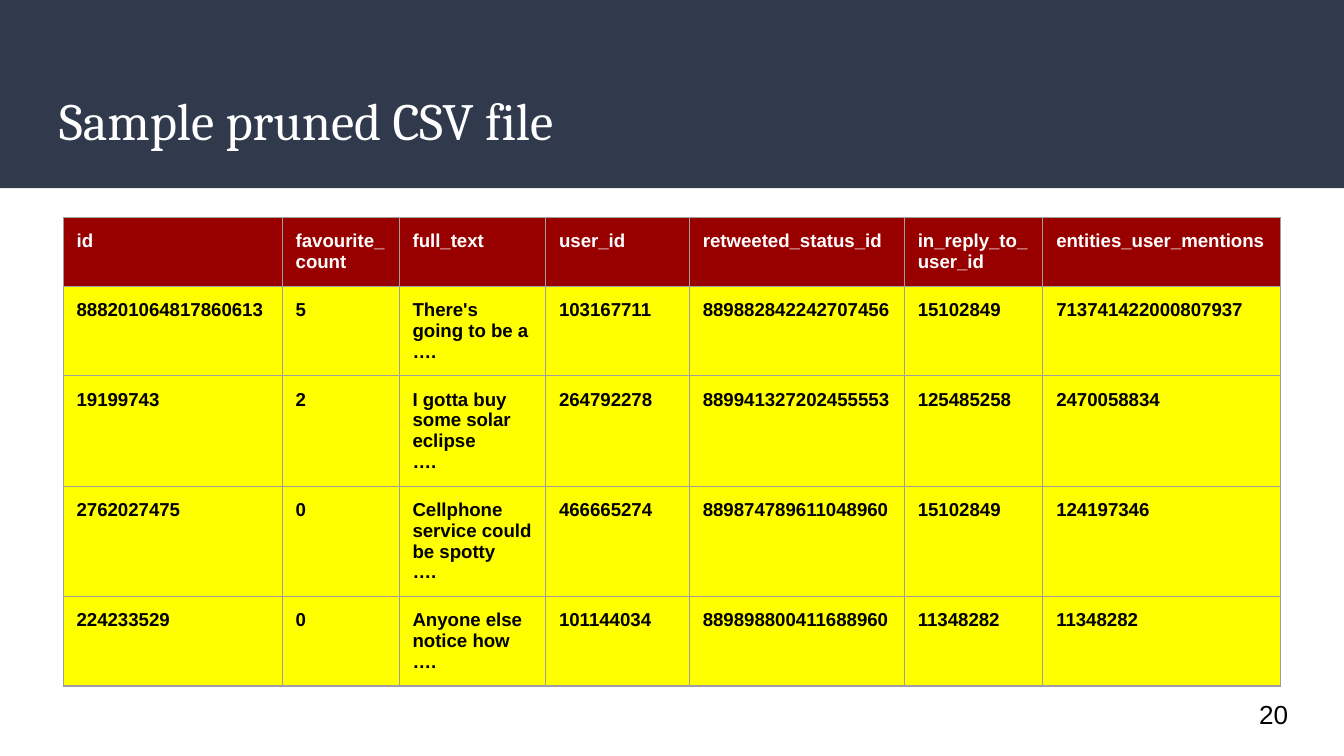
from lxml import etree
from pptx import Presentation
from pptx.dml.color import RGBColor
from pptx.enum.shapes import MSO_SHAPE
from pptx.enum.text import MSO_ANCHOR, PP_ALIGN
from pptx.oxml.ns import qn
from pptx.util import Inches, Pt

RECT = MSO_SHAPE.RECTANGLE
MID, TOP = MSO_ANCHOR.MIDDLE, MSO_ANCHOR.TOP
LEFT = PP_ALIGN.LEFT

NAVY = RGBColor(0x31, 0x39, 0x4D)
WHITE = RGBColor(0xFF, 0xFF, 0xFF)
BLACK = RGBColor(0, 0, 0)
RED = RGBColor(0x98, 0, 0)
YELLOW = RGBColor(0xFF, 0xFF, 0)
GREY = RGBColor(0x9E, 0x9E, 0x9E)

WIDE = Inches(10)
HIGH = WIDE * 9 // 16
PAD = Inches(0.1)
COLS = [1.63, 0.87, 1.09, 1.07, 1.6, 1.03, 1.77]
ROWS = [0.42, 0.42, 0.42, 0.43, 0.43]
SIDES = ("a:lnL", "a:lnR", "a:lnT", "a:lnB")
INSETS = dict.fromkeys(
    ("margin_left", "margin_right", "margin_top", "margin_bottom"), PAD)

HEAD = {"name": "Cambria", "size": Pt(28), "bold": False, "color": WHITE}
LABEL = {"name": "Arial", "size": Pt(10), "bold": True, "color": WHITE}
BODY = {**LABEL, "color": BLACK}
PAGE = {"name": "Arial", "size": Pt(14), "bold": False, "color": BLACK}

DATA = [
    ["id", "favourite_count", "full_text", "user_id", "retweeted_status_id",
     "in_reply_to_user_id", "entities_user_mentions"],
    ["888201064817860613", "5", "There's going to be a ….", "103167711",
     "889882842242707456", "15102849", "713741422000807937"],
    ["19199743", "2", "I gotta buy some solar eclipse\n….", "264792278",
     "889941327202455553", "125485258", "2470058834"],
    ["2762027475", "0", "Cellphone service could be spotty\n….", "466665274",
     "889874789611048960", "15102849", "124197346"],
    ["224233529", "0", "Anyone else notice how\n….", "101144034",
     "889898800411688960", "11348282", "11348282"],
]


def assign(item, values):
    """Set each attribute named in a dict."""
    for key, value in values.items():
        setattr(item, key, value)


def write(frame, text, style):
    """Fill a text frame with left-aligned, styled paragraphs."""
    frame.text = text
    for para in frame.paragraphs:
        para.alignment = LEFT
        for run in para.runs:
            for key, value in style.items():
                if key == "color":
                    run.font.color.rgb = value
                else:
                    setattr(run.font, key, value)


def share(box, x, y, w, h):
    """Return the part of a box given by shares of its size."""
    left, top, wide, high = box
    return (int(left + x * wide), int(top + y * high),
            int(w * wide), int(h * high))


def edge(cell):
    """Draw a thin grey line on all four sides of a cell."""
    props = cell._tc.get_or_add_tcPr()
    for spot, side in enumerate(SIDES):
        line = etree.Element(qn(side), w=str(Pt(0.75)))
        fill = etree.SubElement(line, qn("a:solidFill"))
        etree.SubElement(fill, qn("a:srgbClr"), val=str(GREY))
        props.insert(spot, line)


def banner(slide, box):
    """Place the dark band with the title on it."""
    band = slide.shapes.add_shape(RECT, *box)
    band.shadow.inherit = False
    band.fill.solid()
    band.fill.fore_color.rgb = NAVY
    band.line.fill.background()
    slide.shapes._spTree.insert(2, band._element)
    title = slide.shapes.title
    spot = share(box, 0.03, 0.39, 0.93, 0.49)
    assign(title, dict(zip(("left", "top", "width", "height"), spot)))
    title.left = (WIDE - title.width) // 2 - Inches(0.01)
    assign(title.text_frame,
           {**INSETS, "word_wrap": True, "vertical_anchor": MID})
    write(title.text_frame, "Sample pruned CSV file", HEAD)


def grid(slide, box):
    """Place the table of sample records."""
    left, top, wide, high = box
    table = slide.shapes.add_table(
        len(ROWS), len(COLS), left, top, wide, high).table
    for col, size in zip(table.columns, COLS):
        col.width = int(wide * size / sum(COLS))
    for row, size, texts in zip(table.rows, ROWS, DATA):
        row.height = Inches(size)
        first = texts is DATA[0]
        for cell, text in zip(row.cells, texts):
            assign(cell, {**INSETS, "vertical_anchor": TOP})
            cell.fill.solid()
            cell.fill.fore_color.rgb = RED if first else YELLOW
            write(cell.text_frame, text, LABEL if first else BODY)
            edge(cell)


def number(slide, box):
    """Place the page number."""
    frame = slide.shapes.add_textbox(*box).text_frame
    assign(frame, {**INSETS, "word_wrap": True, "vertical_anchor": MID})
    write(frame, "20", PAGE)


def main():
    """Build and save the slide."""
    deck = Presentation()
    assign(deck, {"slide_width": WIDE, "slide_height": HIGH})
    slide = deck.slides.add_slide(deck.slide_layouts[5])
    wide = Inches(sum(COLS))
    banner(slide, (0, 0, WIDE, Inches(1.4)))
    grid(slide, ((WIDE - wide) // 2, Inches(1.62), wide, Inches(sum(ROWS))))
    number(slide, (Inches(9.27), Inches(5.1), Inches(0.6), Inches(0.43)))
    deck.save("out.pptx")


if __name__ == "__main__":
    main()
